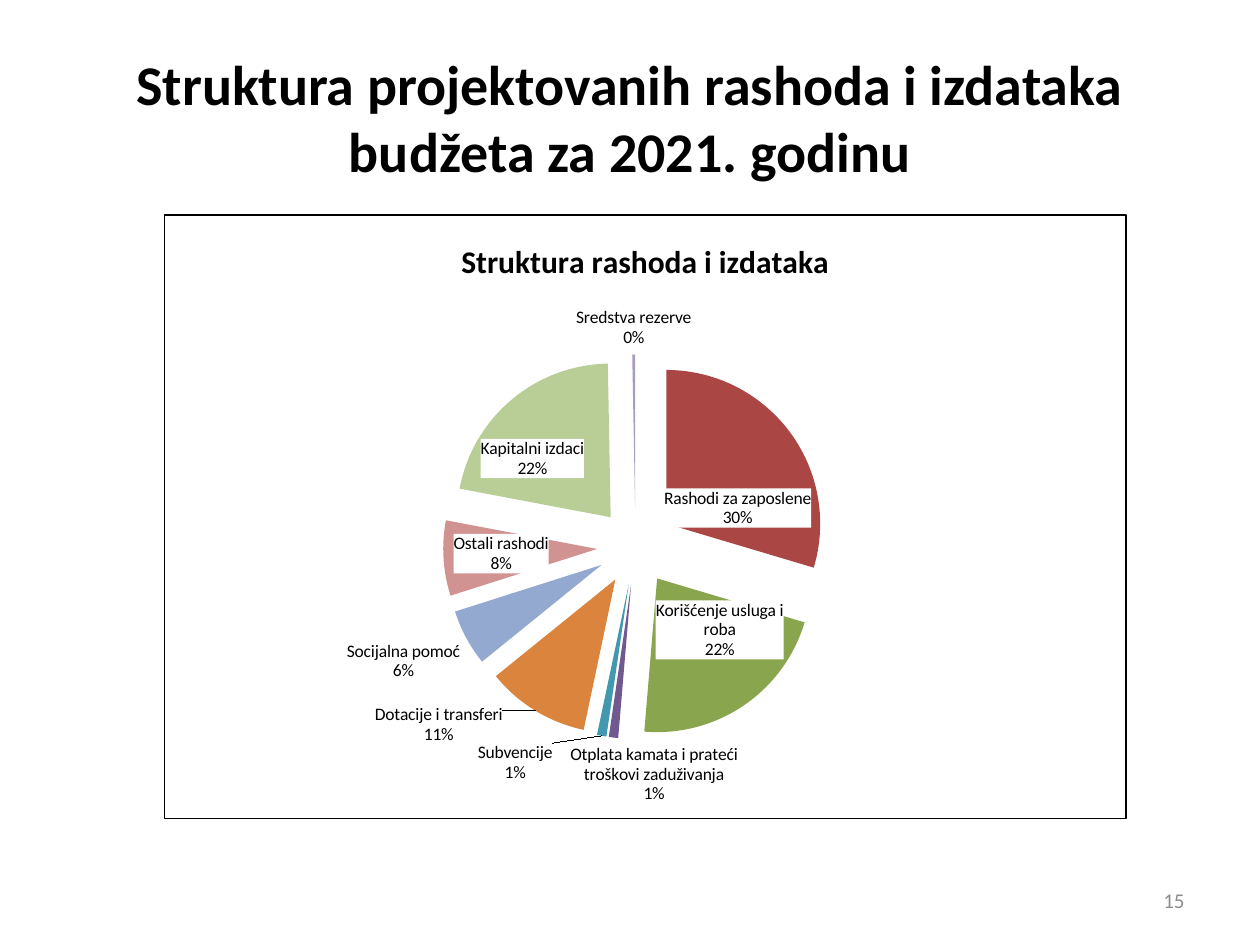
"""Build the slide on the structure of projected 2021 budget expenditure."""
from typing import NamedTuple, Optional

from pptx import Presentation
from pptx import oxml
from pptx import util as u
from pptx.chart import data as cd
from pptx.dml.color import RGBColor
from pptx.enum import chart as ec
from pptx.enum import text as et
from pptx.oxml import ns

BLACK = RGBColor(0x00, 0x00, 0x00)
GREY = RGBColor(0x8C, 0x8C, 0x8C)
BLUE = RGBColor(0x45, 0x72, 0xA7)
RED = RGBColor(0xAA, 0x46, 0x43)
GREEN = RGBColor(0x89, 0xA5, 0x4E)
PURPLE = RGBColor(0x71, 0x58, 0x8F)
TEAL = RGBColor(0x41, 0x98, 0xAF)
ORANGE = RGBColor(0xDB, 0x84, 0x3D)
LIGHT_BLUE = RGBColor(0x93, 0xA9, 0xCF)
LIGHT_RED = RGBColor(0xD1, 0x93, 0x92)
LIGHT_GREEN = RGBColor(0xB9, 0xCD, 0x96)
LIGHT_PURPLE = RGBColor(0xA9, 0x9B, 0xBD)

FONT = "Calibri"
CHART_TITLE = "Struktura rashoda i izdataka"


class Box(NamedTuple):
    """Position and size in centimetres."""
    left: float
    top: float
    width: float
    height: float

    def lengths(self) -> list:
        """Return the four lengths for python-pptx."""
        return [u.Cm(v) for v in self]


class Slice(NamedTuple):
    """One pie slice with its label placement and offset."""
    name: str
    value: Optional[float]
    color: RGBColor
    place: str = "outEnd"
    dx: float = 0
    dy: float = 0


SLICES = [
    Slice(CHART_TITLE, None, BLUE),
    Slice("Rashodi za zaposlene", 30, RED, "ctr", 0.01, 0.05),
    Slice("Korišćenje usluga i roba", 22, GREEN, "ctr", 0.02, -0.02),
    Slice("Otplata kamata i prateći troškovi zaduživanja", 1, PURPLE, dx=0.13),
    Slice("Subvencije", 1, TEAL, dx=-0.05),
    Slice("Dotacije i transferi", 11, ORANGE, dx=-0.03, dy=-0.02),
    Slice("Socijalna pomoć", 6, LIGHT_BLUE),
    Slice("Ostali rashodi", 8, LIGHT_RED, "ctr", -0.02),
    Slice("Kapitalni izdaci", 22, LIGHT_GREEN, "ctr", -0.03),
    Slice("Sredstva rezerve", 0.3, LIGHT_PURPLE),
]


def chart_xml(tag: str, body: str = "", attrs: str = ""):
    """Parse one chart element."""
    return oxml.parse_xml(f'<c:{tag} {ns.nsdecls("c", "a")} {attrs}>{body}</c:{tag}>')


def manual_layout(**values) -> str:
    """Return a manual layout from its named settings."""
    body = "".join(f'<c:{k} val="{v}"/>' for k, v in values.items())
    return f"<c:manualLayout>{body}</c:manualLayout>"


def label_xml(index: int, item: Slice):
    """Return the label element of one slice."""
    body = f'<c:idx val="{index}"/>'
    if item.value is None:
        return chart_xml("dLbl", body + '<c:delete val="1"/>')
    shown = {"LegendKey": 0, "Val": 0, "CatName": 1, "SerName": 0, "Percent": 1, "BubbleSize": 0}
    body += f"<c:layout>{manual_layout(x=item.dx, y=item.dy)}</c:layout>"
    body += '<c:numFmt formatCode="0%" sourceLinked="0"/>'
    body += '<c:spPr><a:solidFill><a:srgbClr val="FFFFFF"/></a:solidFill></c:spPr>'
    body += f'<c:dLblPos val="{item.place}"/>'
    body += "".join(f'<c:show{k} val="{v}"/>' for k, v in shown.items())
    return chart_xml("dLbl", body + "<c:separator>\n</c:separator>")


def set_font(font, size: float, color: RGBColor = BLACK, bold: bool = False) -> None:
    """Format a font."""
    font.name, font.size, font.bold = FONT, u.Pt(size), bold
    font.color.rgb = color


def add_text(slide, box: Box, content: str, *, size: float, align, color=BLACK, bold=False) -> None:
    """Add one formatted text box."""
    tf = slide.shapes.add_textbox(*box.lengths()).text_frame
    tf.word_wrap = True
    tf.vertical_anchor = et.MSO_ANCHOR.MIDDLE
    p = tf.paragraphs[0]
    p.alignment = align
    r = p.add_run()
    r.text = content
    set_font(r.font, size, color, bold)


def add_pie(slide, box: Box, slices: list[Slice]) -> None:
    """Add the exploded pie chart."""
    data = cd.CategoryChartData()
    data.categories = [item.name for item in slices]
    data.add_series("Series 1", [item.value for item in slices])
    chart = slide.shapes.add_chart(ec.XL_CHART_TYPE.PIE, *box.lengths(), data).chart
    set_font(chart.font, 10)
    chart.has_legend = False
    chart.has_title = True
    p = chart.chart_title.text_frame.paragraphs[0]
    r = p.add_run()
    r.text = CHART_TITLE
    set_font(r.font, 18, bold=True)

    plot = chart.plots[0]
    plot.vary_by_categories = True
    series = plot.series[0]
    for i, item in enumerate(slices):
        fill = series.points[i].format.fill
        fill.solid()
        fill.fore_color.rgb = item.color
    ser = series._element
    ser.find(ns.qn("c:dPt")).addprevious(chart_xml("explosion", attrs='val="25"'))

    labels = series.data_labels
    labels.show_value = False
    labels.show_category_name = labels.show_percentage = True
    d_lbls = ser.find(ns.qn("c:dLbls"))
    for i, item in enumerate(slices):
        d_lbls.insert(i, label_xml(i, item))

    space = chart._chartSpace
    area = space.find(".//" + ns.qn("c:plotArea"))
    old = area.find(ns.qn("c:layout"))
    if old is not None:
        area.remove(old)
    inner = manual_layout(layoutTarget="inner", xMode="edge", yMode="edge", x=0.29, y=0.23, w=0.4, h=0.64)
    area.insert(0, chart_xml("layout", inner))
    border = '<a:ln w="9525"><a:solidFill><a:srgbClr val="000000"/></a:solidFill></a:ln>'
    space.find(ns.qn("c:txPr")).addprevious(chart_xml("spPr", "<a:noFill/>" + border))


def main() -> None:
    """Build and save the slide."""
    prs = Presentation()
    prs.slide_width, prs.slide_height = u.Cm(25.4), u.Cm(19.05)
    s = prs.slides.add_slide(prs.slide_layouts[6])
    add_text(s, Box(18.2, 17.65, 5.93, 1.01), "15", size=12, align=et.PP_ALIGN.RIGHT, color=GREY)
    add_text(s, Box(1.27, 0.76, 22.86, 3.18),
             "Struktura projektovanih rashoda i izdataka budžeta za 2021. godinu",
             size=32, align=et.PP_ALIGN.CENTER, bold=True)
    add_pie(s, Box(3.3, 4.32, 19.41, 12.19), SLICES)
    prs.save("out.pptx")


if __name__ == "__main__":
    main()
